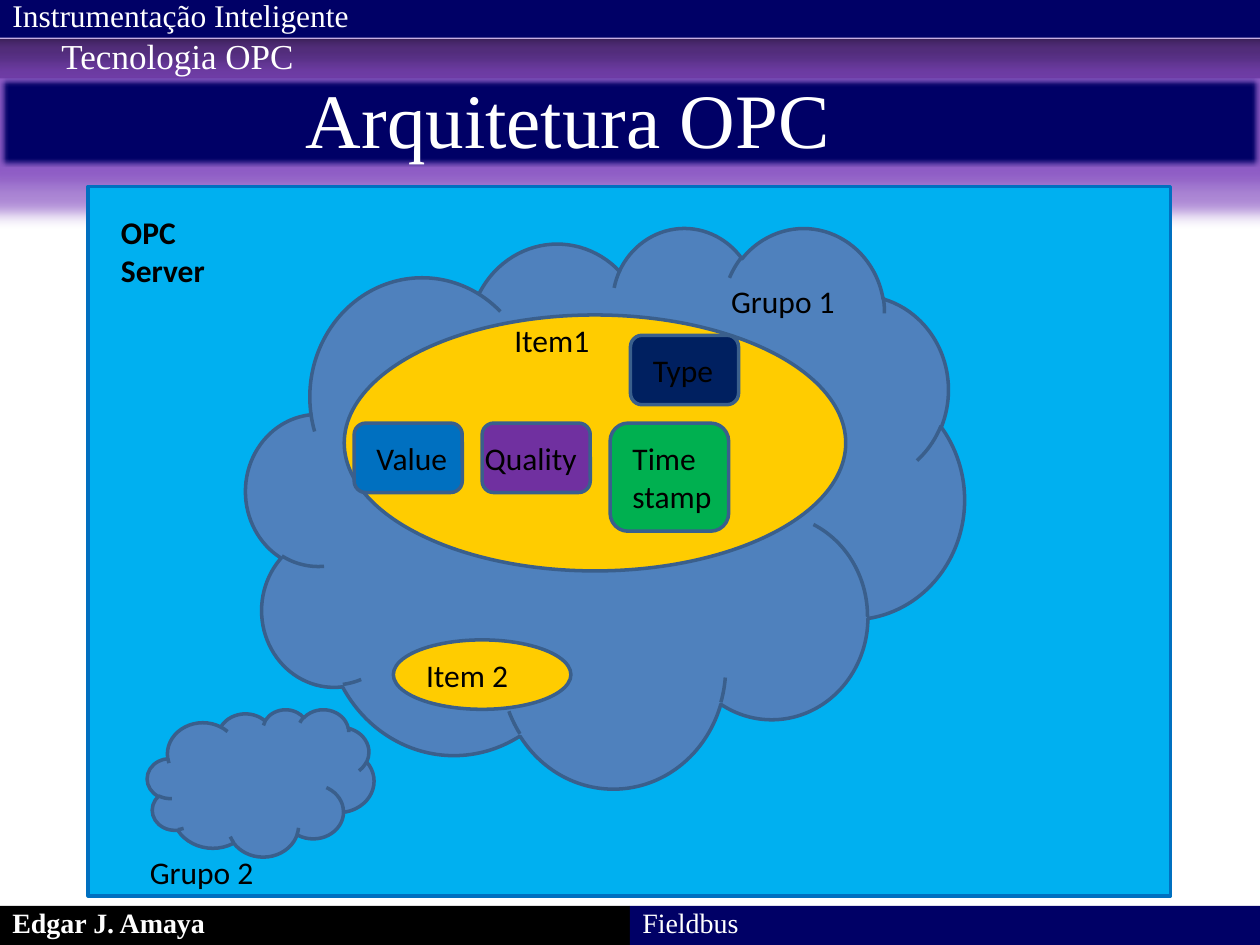
from dataclasses import dataclass

from lxml.etree import SubElement
from pptx import Presentation
from pptx.dml.color import RGBColor
from pptx.enum.shapes import MSO_SHAPE
from pptx.enum.text import MSO_ANCHOR, PP_ALIGN
from pptx.oxml.ns import qn
from pptx.util import Cm, Pt


@dataclass(frozen=True)
class Theme:
    navy: str = "000066"
    black: str = "000000"
    white: str = "FFFFFF"
    glow: str = "7F46BE"
    server: str = "00B0F0"
    server_edge: str = "0070C0"
    group: str = "4F81BD"
    edge: str = "3A5F8C"
    item: str = "FFCC00"
    value: str = "0070C0"
    quality: str = "7030A0"
    stamp: str = "00B050"
    type: str = "002060"
    serif: str = "Times New Roman"
    sans: str = "Calibri"
    title_size: int = 44
    subtitle_size: int = 20
    body_size: int = 18
    footer_size: int = 16
    line_width: int = 2


THEME = Theme()


@dataclass(frozen=True)
class Box:
    """A rectangle in centimetres."""
    left: float
    top: float
    width: float
    height: float

    def inner(self, left, top, width, height):
        return Box(self.left + left, self.top + top, width, height)

    def lengths(self):
        return [Cm(n) for n in (self.left, self.top, self.width, self.height)]


def write(shape, text, size, font, color, bold=False):
    frame = shape.text_frame
    frame.text = text
    frame.word_wrap = True
    para = frame.paragraphs[0]
    para.alignment = PP_ALIGN.LEFT
    for span in para.runs:
        span.font.size = Pt(size)
        span.font.name = font
        span.font.bold = bold
        span.font.color.rgb = RGBColor.from_string(color)


def add_shape(page, kind, box, fill, line=None):
    shape = page.shapes.add_shape(kind, *box.lengths())
    shape.shadow.inherit = False
    shape.fill.solid()
    shape.fill.fore_color.rgb = RGBColor.from_string(fill)
    if line:
        shape.line.color.rgb = RGBColor.from_string(line)
        shape.line.width = Pt(THEME.line_width)
    else:
        shape.line.fill.background()
    return shape


def add_label(page, box, text, bold=False):
    label = page.shapes.add_textbox(*box.lengths())
    write(label, text, THEME.body_size, THEME.sans, THEME.black, bold)


def add_glow(shape):
    """Give the shape a purple halo and slightly soft edges."""
    effects = shape.element.spPr.find(qn("a:effectLst"))
    glow = SubElement(effects, qn("a:glow"), rad=str(Pt(18)))
    color = SubElement(glow, qn("a:srgbClr"), val=THEME.glow)
    SubElement(color, qn("a:alpha"), val="65000")
    SubElement(effects, qn("a:softEdge"), rad=str(Pt(2.5)))


def add_header(page, box):
    bar = MSO_SHAPE.RECTANGLE
    add_shape(page, bar, box.inner(0, 0.79, box.width, 0.79), THEME.black)
    add_glow(add_shape(page, bar, box.inner(0, 1.57, box.width, 1.78), THEME.navy))
    add_shape(page, bar, box.inner(0, 0, box.width, 0.76), THEME.navy)

    for text, place, size in (
        ("Instrumentação Inteligente", box.inner(0, -0.2, 16.08, 1.02), THEME.body_size),
        ("Tecnologia OPC", box.inner(0.99, 0.58, 12.7, 1.12), THEME.subtitle_size),
    ):
        line = page.shapes.add_textbox(*place.lengths())
        write(line, text, size, THEME.serif, THEME.white)

    title = page.shapes.title
    title.left, title.top, title.width, title.height = box.inner(1.09, 1.37, 21.11, 2.01).lengths()
    write(title, "Arquitetura OPC ", THEME.title_size, THEME.serif, THEME.white)
    title.text_frame.paragraphs[0].alignment = PP_ALIGN.CENTER
    title.text_frame.vertical_anchor = MSO_ANCHOR.MIDDLE
    title.element.getparent().append(title.element)  # bring above the bars


def add_footer(page, box):
    half = box.width / 2
    cells = (("Edgar J. Amaya", THEME.black, True), ("Fieldbus", THEME.navy, False))
    for index, (text, fill, bold) in enumerate(cells):
        place = box.inner(index * half, 0, half, box.height)
        cell = add_shape(page, MSO_SHAPE.RECTANGLE, place, fill)
        write(cell, text, THEME.footer_size, THEME.serif, THEME.white, bold)
        cell.text_frame.vertical_anchor = MSO_ANCHOR.BOTTOM


def add_group(page, box, text, label_left, label_top):
    add_shape(page, MSO_SHAPE.CLOUD, box, THEME.group, THEME.edge)
    add_label(page, box.inner(label_left, label_top, 2.97, 1.02), text)


def add_item(page, box, text, label_left, label_top):
    add_shape(page, MSO_SHAPE.OVAL, box, THEME.item, THEME.edge)
    add_label(page, box.inner(label_left, label_top, 3.38, 1.02), text)


def add_properties(page, box):
    """Place the four property boxes of an item."""
    first, row, pitch = 0.2, 2.18, 2.58
    width, height = 2.18, 1.4
    properties = (
        ("Value", THEME.value, box.inner(first, row, width, height), 0.2, 1.98),
        ("Quality", THEME.quality, box.inner(first + pitch, row, width, height), -0.2, 2.59),
        ("Time stamp", THEME.stamp, box.inner(first + 2 * pitch, row, 2.39, 2.18), 0.2, 2.59),
        ("Type", THEME.type, box.inner(5.77, 0.41, width, height), 0.2, 1.98),
    )
    for text, fill, place, label_left, label_width in properties:
        add_shape(page, MSO_SHAPE.ROUNDED_RECTANGLE, place, fill, THEME.edge)
        add_label(page, place.inner(label_left, 0.2, label_width, place.height - 0.38), text)


def add_server(page, box):
    add_shape(page, MSO_SHAPE.RECTANGLE, box, THEME.server, THEME.server_edge)
    add_label(page, box.inner(0.41, 0.41, 3.38, 1.8), "OPC Server", bold=True)

    main_group = box.inner(3.18, 0.81, 14.48, 11.3)
    add_group(page, main_group, "Grupo 1", 9.53, 0.99)
    add_group(page, box.inner(1.19, 10.54, 4.57, 2.97), "Grupo 2", -0.2, 2.77)

    main_item = main_group.inner(1.98, 1.78, 10.11, 5.16)
    add_item(page, main_item, "Item1", 3.18, 0)
    add_item(page, main_group.inner(2.97, 8.33, 3.58, 1.4), "Item 2", 0.41, 0.2)
    add_properties(page, main_item)


def main():
    deck = Presentation()
    deck.slide_width, deck.slide_height = Cm(25.4), Cm(19.05)
    page = deck.slides.add_slide(deck.slide_layouts[5])
    add_header(page, Box(0, 0, 25.4, 3.35))
    add_footer(page, Box(0, 18.26, 25.4, 0.79))
    add_server(page, Box(1.78, 3.76, 21.82, 14.3))
    deck.save("out.pptx")


if __name__ == "__main__":
    main()
